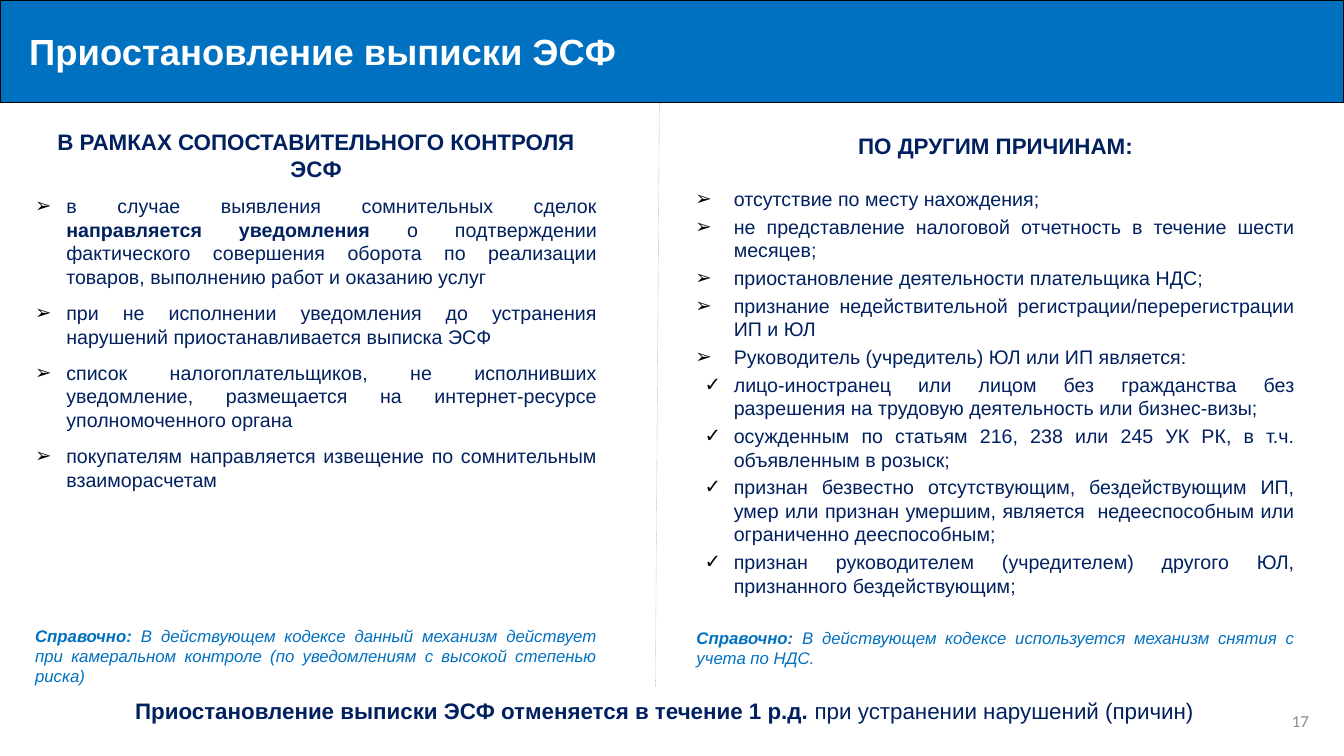
from lxml.etree import SubElement
from pptx import Presentation
from pptx.dml.color import RGBColor
from pptx.enum.dml import MSO_LINE
from pptx.enum.shapes import MSO_CONNECTOR as CONN, MSO_SHAPE as SHAPE
from pptx.enum.text import MSO_ANCHOR as ANCHOR, PP_ALIGN as ALIGN
from pptx.oxml.ns import qn
from pptx.util import Inches, Pt

COLORS = {
    "blue": "0070C0",
    "navy": "002060",
    "white": "FFFFFF",
    "black": "000000",
    "divider": "A6A6A6",
    "number": "8C8C8C",
}

CONTROL_POINTS = [
    [
        ("в случае выявления сомнительных сделок ", False),
        ("направляется уведомления ", True),
        ("о подтверждении фактического совершения оборота по реализации "
         "товаров, выполнению работ и оказанию услуг", False),
    ],
    [("при не исполнении уведомления до устранения нарушений "
      "приостанавливается выписка ЭСФ", False)],
    [("список налогоплательщиков, не исполнивших уведомление, размещается "
      "на интернет-ресурсе уполномоченного органа", False)],
    [("покупателям направляется извещение по сомнительным взаиморасчетам", False)],
]

OTHER_REASONS = [
    "отсутствие по месту нахождения;",
    "не представление налоговой отчетность в течение шести месяцев;",
    "приостановление деятельности плательщика НДС;",
    "признание недействительной регистрации/перерегистрации ИП и ЮЛ",
    "Руководитель (учредитель) ЮЛ или ИП является:",
]

HEAD_REASONS = [
    "лицо-иностранец или лицом без гражданства без разрешения на трудовую "
    "деятельность или бизнес-визы;",
    "осужденным по статьям 216, 238 или 245 УК РК, в т.ч. объявленным в розыск;",
    "признан безвестно отсутствующим, бездействующим ИП, умер или признан "
    "умершим, является  недееспособным или ограниченно дееспособным;",
    "признан руководителем (учредителем) другого ЮЛ, признанного бездействующим;",
]


def rgb(name):
    return RGBColor.from_string(COLORS[name])


def add_run(p, text, size, color="navy", bold=False, italic=False, font="Arial"):
    r = p.add_run()
    r.text = text
    r.font.name = font
    r.font.size = Pt(size)
    r.font.bold = bold
    r.font.italic = italic
    r.font.color.rgb = rgb(color)


def add_text_box(s, left, top, width, height):
    tf = s.shapes.add_textbox(
        Inches(left), Inches(top), Inches(width), Inches(height)).text_frame
    tf.word_wrap = True
    return tf


def add_paragraph(tf, align, before, margin=0, indent=0):
    p = tf.add_paragraph()
    p.alignment = align
    p.space_before = Pt(before)
    pPr = p._p.get_or_add_pPr()
    pPr.set("marL", str(Inches(margin)))
    pPr.set("indent", str(Inches(indent)))
    return p


def add_heading(tf, text, margin=0):
    p = tf.paragraphs[0]
    p.alignment = ALIGN.CENTER
    p._p.get_or_add_pPr().set("marL", str(Inches(margin)))
    add_run(p, text, 16, bold=True)


def add_bullet(tf, parts, before, margin, hanging, mark="➢"):
    p = add_paragraph(tf, ALIGN.JUSTIFY, before, margin, -hanging)
    pPr = p._p.get_or_add_pPr()
    SubElement(SubElement(pPr, qn("a:buClr")), qn("a:srgbClr"), val=COLORS["black"])
    SubElement(pPr, qn("a:buFont"), typeface="Arial")
    SubElement(pPr, qn("a:buChar"), char=mark)
    for text, bold in parts:
        add_run(p, text, 14, bold=bold)


def add_note(tf, text, before, margin=0):
    p = add_paragraph(tf, ALIGN.JUSTIFY, before, margin)
    add_run(p, "Справочно: ", 12, "blue", bold=True, italic=True)
    add_run(p, text, 12, "blue", italic=True)


def add_title_bar(s, text):
    sp = s.shapes.add_shape(SHAPE.RECTANGLE, 0, 0, Inches(13.33), Inches(1.02))
    sp.shadow.inherit = False
    sp.fill.solid()
    sp.fill.fore_color.rgb = rgb("blue")
    sp.line.color.rgb = rgb("black")
    sp.line.width = Pt(1)
    tf = sp.text_frame
    tf.margin_left = Inches(0.29)
    tf.vertical_anchor = ANCHOR.MIDDLE
    p = tf.paragraphs[0]
    p.alignment = ALIGN.LEFT
    add_run(p, text, 26, "white", bold=True)


def add_divider(s):
    line = s.shapes.add_connector(
        CONN.STRAIGHT, Inches(6.5), Inches(6.81), Inches(6.54), Inches(1.02))
    line.line.color.rgb = rgb("divider")
    line.line.width = Pt(0.25)
    line.line.dash_style = MSO_LINE.DASH
    SubElement(line._element.spPr, qn("a:effectLst"))


def add_control_column(s):
    tf = add_text_box(s, 0.25, 1.22, 5.77, 5.7)
    add_heading(tf, "В РАМКАХ СОПОСТАВИТЕЛЬНОГО КОНТРОЛЯ ЭСФ")
    for parts in CONTROL_POINTS:
        add_bullet(tf, parts, 9, 0.31, 0.31)
    add_note(tf, "В действующем кодексе данный механизм действует при камеральном "
             "контроле (по уведомлениям с высокой степенью риска)", 96)


def add_reasons_column(s):
    tf = add_text_box(s, 6.5, 1.26, 6.44, 5.49)
    add_heading(tf, "ПО ДРУГИМ ПРИЧИНАМ:", 0.31)
    for i, text in enumerate(OTHER_REASONS):
        add_bullet(tf, [(text, False)], 3 if i else 20, 0.68, 0.38)
    for text in HEAD_REASONS:
        add_bullet(tf, [(text, False)], 3, 0.68, 0.29, "✓")
    add_note(tf, "В действующем кодексе используется механизм снятия с учета по НДС.",
             22, 0.31)


def add_conclusion(s):
    tf = add_text_box(s, 0.55, 6.87, 12.08, 0.37)
    add_heading(tf, "Приостановление выписки ЭСФ отменяется в течение 1 р.д. ")
    add_run(tf.paragraphs[0], "при устранении нарушений (причин)", 16)


def add_page_number(s, number):
    tf = add_text_box(s, 10.08, 6.95, 3, 0.4)
    tf.vertical_anchor = ANCHOR.MIDDLE
    p = tf.paragraphs[0]
    p.alignment = ALIGN.RIGHT
    add_run(p, number, 12, "number", font="Calibri")


def main():
    prs = Presentation()
    prs.slide_width = Inches(13.33)
    prs.slide_height = Inches(7.5)
    s = prs.slides.add_slide(prs.slide_layouts[6])
    add_title_bar(s, "Приостановление выписки ЭСФ")
    add_page_number(s, "17")
    add_reasons_column(s)
    add_divider(s)
    add_control_column(s)
    add_conclusion(s)
    prs.save("out.pptx")


if __name__ == "__main__":
    main()
